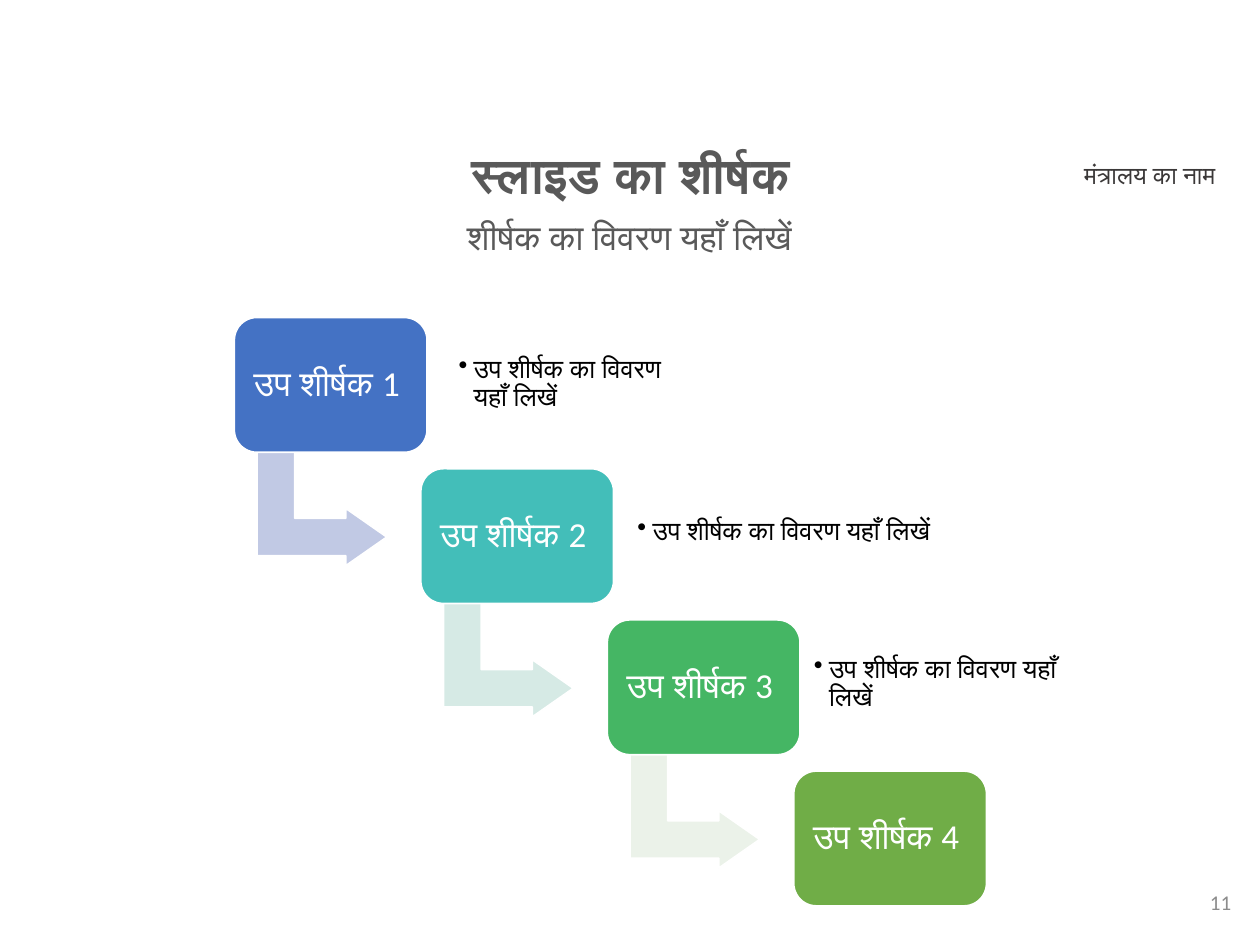
"""Build a slide with four descending steps joined by bent arrows."""
import pptx
import pptx.util
import pptx.dml.color
import pptx.enum.shapes
import pptx.enum.text
from lxml import etree

Inches = pptx.util.Inches
RGBColor = pptx.dml.color.RGBColor
SHAPE = pptx.enum.shapes.MSO_SHAPE
ALIGN = pptx.enum.text.PP_ALIGN
ANCHOR = pptx.enum.text.MSO_ANCHOR

WHITE = RGBColor(0xFF, 0xFF, 0xFF)
BLACK = RGBColor(0x00, 0x00, 0x00)
GREY = RGBColor(0x59, 0x59, 0x59)
DARK = RGBColor(0x3B, 0x38, 0x38)
PALE = RGBColor(0x8C, 0x8C, 0x8C)
BLUE = RGBColor(0x44, 0x72, 0xC4)
TEAL = RGBColor(0x43, 0xBE, 0xB9)
GREEN = RGBColor(0x45, 0xB6, 0x64)
OLIVE = RGBColor(0x70, 0xAD, 0x47)
LILAC = RGBColor(0xC1, 0xC9, 0xE4)
MINT = RGBColor(0xD6, 0xEA, 0xE5)
MIST = RGBColor(0xEB, 0xF2, 0xE9)


def write(shape, text, size, color, align, anchor=ANCHOR.TOP, pad=None, bold=False):
    frame = shape.text_frame
    frame.word_wrap = True
    frame.auto_size = pptx.enum.text.MSO_AUTO_SIZE.NONE
    frame.vertical_anchor = anchor
    if pad:
        frame.margin_left = frame.margin_right = Inches(pad)
        frame.margin_top = frame.margin_bottom = Inches(pad)
    para = frame.paragraphs[0]
    para.alignment = align
    para.line_spacing = 0.9
    para.space_before = pptx.util.Pt(0)
    run = para.add_run()
    run.text = text
    run.font.name = "Calibri"
    run.font.size = pptx.util.Pt(size)
    run.font.bold = bold
    run.font.color.rgb = color
    return para


def draw(kind, left, top, width, height, fill, *adjust):
    shape = slide.shapes.add_shape(
        kind, Inches(left), Inches(top), Inches(width), Inches(height))
    shape.shadow.inherit = False
    shape.fill.solid()
    shape.fill.fore_color.rgb = fill
    shape.line.color.rgb = WHITE
    shape.line.width = pptx.util.Pt(1)
    for index, value in enumerate(adjust):
        shape.adjustments[index] = value
    return shape


deck = pptx.Presentation()
deck.slide_width, deck.slide_height = Inches(10), Inches(7.5)
slide = deck.slides.add_slide(deck.slide_layouts[5])

title = slide.shapes.title
title.left, title.top = Inches(1.86), Inches(1.15)
title.width, title.height = Inches(6.29), Inches(0.47)
write(title, "स्लाइड का शीर्षक", 28, GREY, ALIGN.CENTER, bold=True)

labels = [
    (1.46, 1.7, 7.07, 0.63, "शीर्षक का विवरण यहाँ लिखें", 20, GREY, ALIGN.CENTER, ANCHOR.TOP),
    (8.31, 1.22, 1.63, 0.34, "मंत्रालय का नाम", 14, DARK, ALIGN.CENTER, ANCHOR.TOP),
    (7.62, 6.96, 2.25, 0.4, "11", 12, PALE, ALIGN.RIGHT, ANCHOR.MIDDLE),
]
for left, top, width, height, *style in labels:
    box = slide.shapes.add_textbox(
        Inches(left), Inches(top), Inches(width), Inches(height))
    para = write(box, *style)
    para.line_spacing = 0.9 if style[1] == 20 else 1.0

steps = [
    (BLUE, LILAC, 3.56, 2.62, 2.01),
    (TEAL, MINT, 4.98, 3.79, 2.96),
    (GREEN, MIST, 6.38, 5.0, 2.47),
    (OLIVE, None, None, None, None),
]
for index, (fill, tint, left, top, width) in enumerate(steps):
    x, y = 1.86 + 1.48 * index, 2.52 + 1.2 * index
    if tint:
        arrow = draw(SHAPE.BENT_UP_ARROW, x + 0.24, y + 1, 0.91, 1.03, tint,
                     0.328, 0.25, 0.358)
        arrow.rotation = 90
    card = draw(SHAPE.ROUNDED_RECTANGLE, x, y, 1.53, 1.07, fill, 0.167)
    write(card, f"उप शीर्षक {index + 1} ", 20, WHITE, ALIGN.CENTER, ANCHOR.MIDDLE, 0.08)
    if tint:
        note = slide.shapes.add_textbox(
            Inches(left), Inches(top), Inches(width), Inches(0.86))
        para = write(note, "उप शीर्षक का विवरण यहाँ लिखें", 15, BLACK,
                     ALIGN.LEFT, ANCHOR.MIDDLE, 0.08)
        para.level = 1
        props = para._p.get_or_add_pPr()
        props.set("marL", str(Inches(0.12)))
        props.set("indent", str(Inches(-0.12)))
        bullet = etree.SubElement(props, pptx.oxml.ns.qn("a:buChar"))
        bullet.set("char", "•")

deck.save("out.pptx")
